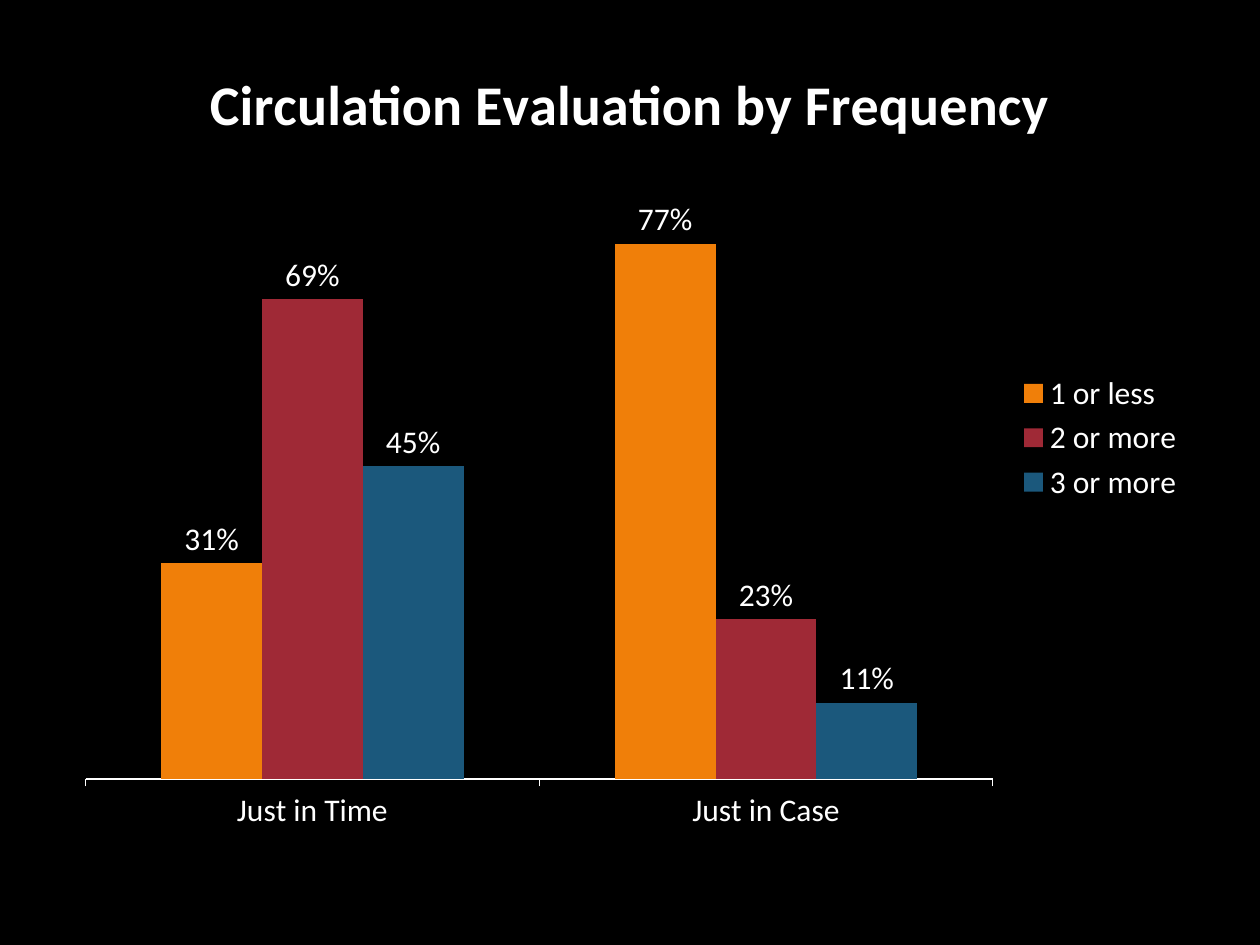
from lxml import etree
from pptx import Presentation
from pptx.chart.data import CategoryChartData
from pptx.dml.color import RGBColor
from pptx.enum.chart import XL_CHART_TYPE, XL_LABEL_POSITION, XL_LEGEND_POSITION, XL_TICK_MARK
from pptx.oxml.ns import qn
from pptx.util import Inches, Pt

CLUSTERED = XL_CHART_TYPE.COLUMN_CLUSTERED
OUTSIDE_END = XL_LABEL_POSITION.OUTSIDE_END
LEGEND_RIGHT = XL_LEGEND_POSITION.RIGHT
TICK_OUTSIDE = XL_TICK_MARK.OUTSIDE

COLORS = {
    "background": "000000",
    "text": "FFFFFF",
    "1 or less": "F07F09",
    "2 or more": "9F2936",
    "3 or more": "1B587C",
}
FREQUENCIES = {
    "1 or less": (0.31, 0.77),
    "2 or more": (0.69, 0.23),
    "3 or more": (0.45, 0.11),
}
PLOT_SHARES = {"x": 0.02, "y": 0.15, "w": 0.8, "h": 0.77}
white = RGBColor.from_string(COLORS["text"])

# Slide
prs = Presentation()
prs.slide_width, prs.slide_height = Inches(10), Inches(7.5)
slide = prs.slides.add_slide(prs.slide_layouts[6])
slide.background.fill.solid()
slide.background.fill.fore_color.rgb = RGBColor.from_string(COLORS["background"])

# Chart
evaluation = CategoryChartData(number_format="0%")
evaluation.categories = ["Just in Time", "Just in Case"]
for frequency, shares in FREQUENCIES.items():
    evaluation.add_series(frequency, shares)
chart = slide.shapes.add_chart(
    CLUSTERED, int(prs.slide_width * 0.05), Inches(0.25),
    int(prs.slide_width * 0.9), int(prs.slide_height * 0.86), evaluation).chart
chart.font.name = "Calibri"
chart.font.size = Pt(18)
chart.font.color.rgb = white

# Title
chart.has_title = True
chart.chart_title.include_in_layout = False
heading = chart.chart_title.text_frame
heading.text = "Circulation Evaluation by Frequency"
heading_font = heading.paragraphs[0].runs[0].font
heading_font.name = "Calibri"
heading_font.size = Pt(32)
heading_font.bold = True
heading_font.color.rgb = white

# Legend
chart.has_legend = True
chart.legend.position = LEGEND_RIGHT
chart.legend.include_in_layout = False

# Axes
chart.category_axis.major_tick_mark = TICK_OUTSIDE
chart.category_axis.format.line.color.rgb = white
chart.value_axis.visible = False
chart.value_axis.has_major_gridlines = False
chart.value_axis.minimum_scale = 0
chart.value_axis.maximum_scale = 0.9

# Columns and their labels
plot = chart.plots[0]
plot.gap_width = 150
plot.overlap = 0
plot.vary_by_categories = False
for columns in plot.series:
    columns.format.fill.solid()
    columns.format.fill.fore_color.rgb = RGBColor.from_string(COLORS[columns.name])
    labels = columns.data_labels
    labels.show_value = True
    labels.number_format = "0%"
    labels.number_format_is_linked = False
    labels.position = OUTSIDE_END

# Inner plot area as shares of the chart
plot_area = chart.element.find(".//" + qn("c:plotArea"))
for automatic in plot_area.findall(qn("c:layout")):
    plot_area.remove(automatic)
layout = etree.Element(qn("c:layout"))
plot_area.insert(0, layout)
manual = etree.SubElement(layout, qn("c:manualLayout"))
settings = {"layoutTarget": "inner", "xMode": "edge", "yMode": "edge", **PLOT_SHARES}
for setting, value in settings.items():
    etree.SubElement(manual, qn("c:" + setting)).set("val", str(value))

prs.save("out.pptx")
